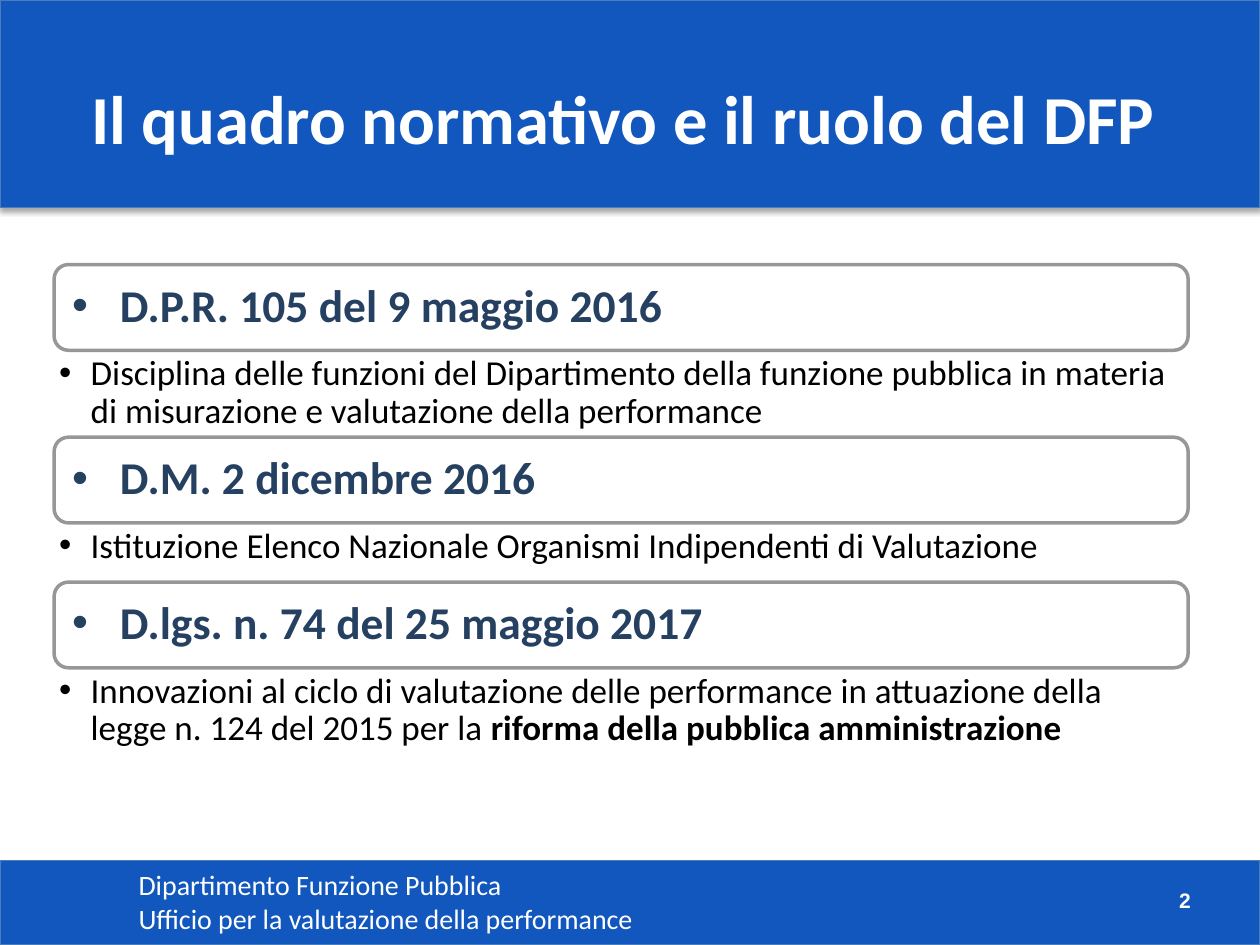
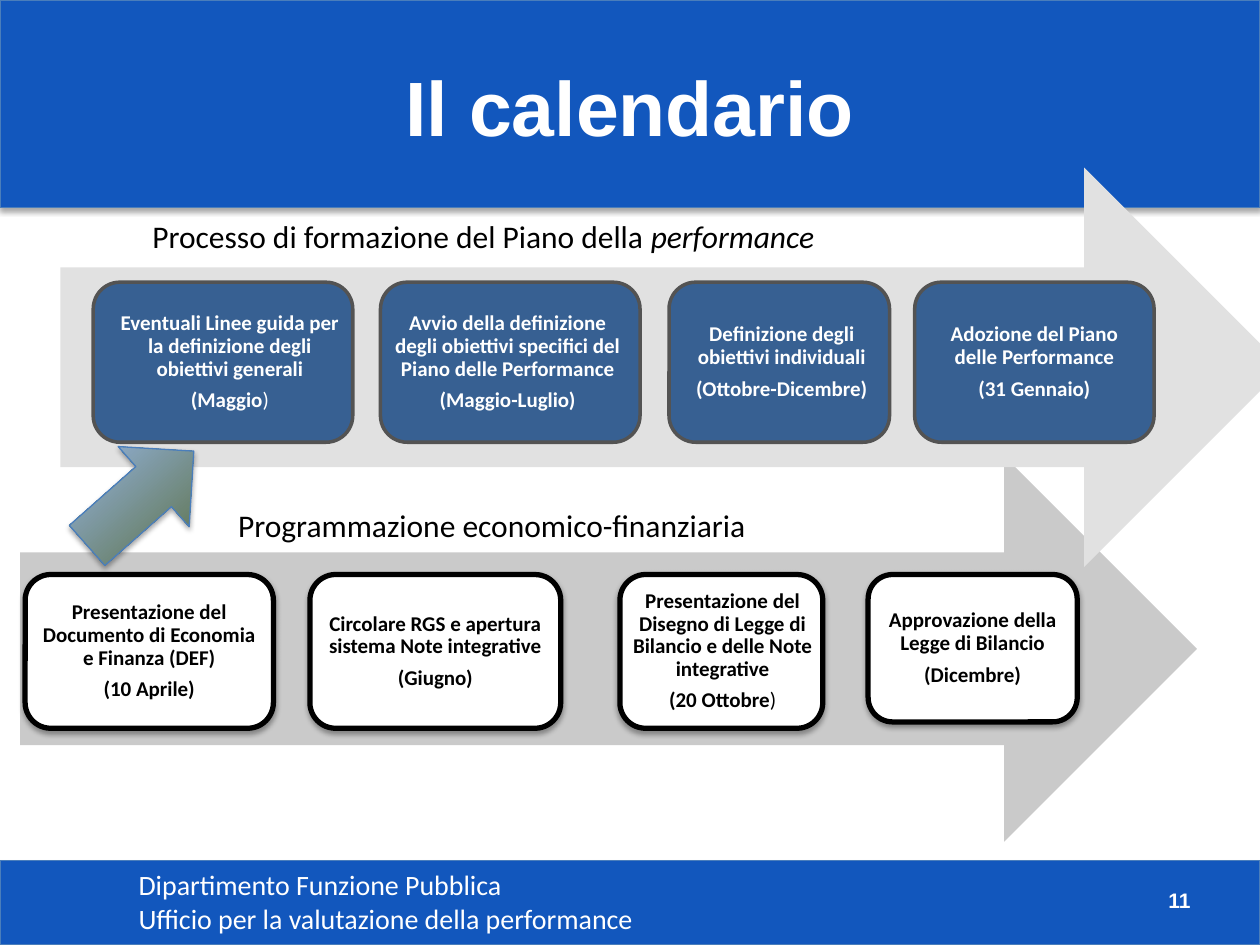
from lxml.etree import SubElement
from pptx import Presentation
from pptx.dml.color import RGBColor
from pptx.enum.shapes import MSO_SHAPE
from pptx.enum.text import MSO_ANCHOR, PP_ALIGN
from pptx.oxml.ns import qn
from pptx.util import Inches, Pt

BLUE = RGBColor(0x12, 0x57, 0xBD)
EDGE_BLUE = RGBColor(0x4A, 0x7E, 0xBB)
STEP_BLUE = RGBColor(0x37, 0x60, 0x92)
NAVY = RGBColor(0x25, 0x40, 0x61)
SKY = RGBColor(0xA2, 0xC3, 0xFF)
OLIVE = RGBColor(0x4F, 0x62, 0x28)
WHITE = RGBColor(0xFF, 0xFF, 0xFF)
BLACK = RGBColor(0x00, 0x00, 0x00)
DARK_GREY = RGBColor(0x53, 0x53, 0x53)
FRAME_GREY = RGBColor(0x97, 0x97, 0x97)
MID_GREY = RGBColor(0xCA, 0xCA, 0xCA)
LIGHT_GREY = RGBColor(0xE1, 0xE1, 0xE1)

COLUMNS, ROWS = 100, 75
INSET = 0.05


def write(paragraph, text, font="Calibri", size=12, color=BLACK, bold=False, italic=False):
    run = paragraph.add_run()
    run.text = text
    run.font.name = font
    run.font.size = Pt(size)
    run.font.color.rgb = color
    run.font.bold = bold
    run.font.italic = italic


def add_bullet(paragraph, indent):
    properties = paragraph._p.get_or_add_pPr()
    properties.set("marL", str(Inches(indent)))
    properties.set("indent", str(-Inches(indent)))
    SubElement(properties, qn("a:buFont"), typeface="Arial")
    SubElement(properties, qn("a:buChar"), char="•")


def add_shadow(shape):
    effects = SubElement(shape._element.spPr, qn("a:effectLst"))
    shadow = SubElement(effects, qn("a:outerShdw"), blurRad=str(Pt(3)),
                        dist=str(Pt(1.8)), dir="5400000", rotWithShape="0")
    tint = SubElement(shadow, qn("a:srgbClr"), val="000000")
    SubElement(tint, qn("a:alpha"), val="35000")


class Deck:
    def __init__(self):
        self.presentation = Presentation()
        self.presentation.slide_width = Inches(10)
        self.presentation.slide_height = Inches(7.5)
        self.column = self.presentation.slide_width / COLUMNS
        self.row = self.presentation.slide_height / ROWS
        self.slide = None

    def place(self, left, top, width, height):
        return (round(left * self.column), round(top * self.row),
                round(width * self.column), round(height * self.row))

    def fill_text(self, frame, paragraphs, align=PP_ALIGN.LEFT, anchor=MSO_ANCHOR.TOP,
                  insets=(INSET, INSET), vertical_inset=INSET, spacing=1.0, gap=0,
                  bullet_indent=None, **style):
        frame.word_wrap = True
        frame.vertical_anchor = anchor
        frame.margin_left, frame.margin_right = map(Inches, insets)
        frame.margin_top = frame.margin_bottom = Inches(vertical_inset)
        for index, runs in enumerate(paragraphs):
            paragraph = frame.add_paragraph() if index else frame.paragraphs[0]
            if bullet_indent:
                add_bullet(paragraph, bullet_indent)
            paragraph.alignment = align
            paragraph.line_spacing = spacing
            paragraph.space_before = Pt(gap if index else 0)
            for text, changes in [(runs, {})] if isinstance(runs, str) else runs:
                write(paragraph, text, **{**style, **changes})

    def text(self, box, *paragraphs, **style):
        frame = self.slide.shapes.add_textbox(*self.place(*box)).text_frame
        self.fill_text(frame, paragraphs, **style)

    def shape(self, kind, box, fill, line=None, weight=0.75, shadow=False):
        shape = self.slide.shapes.add_shape(kind, *self.place(*box))
        shape.fill.solid()
        shape.fill.fore_color.rgb = fill
        if line is None:
            shape.line.fill.background()
        else:
            shape.line.color.rgb = line
            shape.line.width = Pt(weight)
        if shadow:
            add_shadow(shape)
        else:
            shape.shadow.inherit = False
        return shape

    def start_slide(self, title, title_box, number, **title_style):
        self.slide = self.presentation.slides.add_slide(self.presentation.slide_layouts[6])
        for top, height in ((68.3, 6.7), (0, 16.5)):
            self.shape(MSO_SHAPE.RECTANGLE, (0, top, COLUMNS, height), BLUE, EDGE_BLUE,
                       shadow=True)
        self.text((10.5, 68.4, 42.4, 6.6), "Dipartimento Funzione Pubblica",
                  "Ufficio per la valutazione della performance", size=16, color=WHITE)
        self.text((90, 70, 5, 2.9), number, align=PP_ALIGN.RIGHT,
                  anchor=MSO_ANCHOR.MIDDLE, font="Arial", color=WHITE, bold=True)
        self.text(title_box, title, align=PP_ALIGN.CENTER, anchor=MSO_ANCHOR.MIDDLE,
                  color=WHITE, bold=True, **title_style)

    def law(self, top, heading, summary, summary_height):
        heading_height = 6.8
        frame = self.shape(MSO_SHAPE.ROUNDED_RECTANGLE, (4.3, top, 90, heading_height),
                           WHITE, FRAME_GREY, 2).text_frame
        self.fill_text(frame, [heading], anchor=MSO_ANCHOR.MIDDLE, insets=(0.11, 0.11),
                       spacing=0.9, bullet_indent=0.38, size=26, color=NAVY, bold=True)
        self.text((4.3, top + heading_height, 90, summary_height), summary,
                  insets=(0.04, 0.04), vertical_inset=0.04, spacing=0.9,
                  bullet_indent=0.25, size=20)
        return top + heading_height + summary_height

    def step(self, box, activity, period, insets, color, **look):
        frame = self.shape(MSO_SHAPE.ROUNDED_RECTANGLE, box, **look).text_frame
        self.fill_text(frame, [activity, period], align=PP_ALIGN.CENTER,
                       anchor=MSO_ANCHOR.MIDDLE, insets=insets, spacing=0.9, gap=5,
                       color=color, bold=True)

    def process(self, arrow_box, arrow_fill, top, steps, **look):
        self.shape(MSO_SHAPE.RIGHT_ARROW, arrow_box, arrow_fill)
        for left, width, height, activity, period, insets in steps:
            self.step((left, top, width, height), activity, period, insets, **look)

    def link_arrow(self, box, rotation):
        arrow = self.shape(MSO_SHAPE.RIGHT_ARROW, box, SKY, EDGE_BLUE)
        arrow.fill.gradient()
        arrow.fill.gradient_angle = 90
        for stop, color in zip(arrow.fill.gradient_stops, (OLIVE, SKY)):
            stop.color.rgb = color
        for position, stop in enumerate(arrow.fill.gradient_stops):
            stop.position = position
        arrow.rotation = rotation
        arrow._element.spPr.remove(arrow._element.spPr.find(qn("a:effectLst")))
        add_shadow(arrow)


def build_framework(deck):
    deck.start_slide("Il quadro normativo e il ruolo del DFP", (1, 3, 97, 12.5), "2",
                     size=39.2)
    laws = (
        ("D.P.R. 105 del 9 maggio 2016",
         "Disciplina delle funzioni del Dipartimento della funzione pubblica in materia "
         "di misurazione e valutazione della performance", 6.9),
        ("D.M. 2 dicembre 2016",
         "Istituzione Elenco Nazionale Organismi Indipendenti di Valutazione", 4.7),
        ("D.lgs. n. 74 del 25 maggio 2017",
         [("Innovazioni al ciclo di valutazione delle performance in attuazione della "
           "legge n. 124 del 2015 per la ", {}),
          ("riforma della pubblica amministrazione", {"bold": True})], 9.7),
    )
    top = 21
    for heading, summary, summary_height in laws:
        top = deck.law(top, heading, summary, summary_height)


def build_calendar(deck):
    deck.start_slide("Il calendario", (0, 2.1, COLUMNS, 12.5), "11", font="Arial", size=44)
    even = (INSET, INSET)
    closing = (")", {"bold": False})
    budget_steps = (
        (2, 19.7, 12.2, "Presentazione del Documento di Economia e Finanza (DEF)",
         "(10 Aprile)", even),
        (24.6, 19.9, 12.2, "Circolare RGS e apertura sistema Note integrative",
         "(Giugno)", even),
        (49.2, 16.1, 12.2,
         "Presentazione del Disegno di Legge di Bilancio e delle Note integrative",
         [("(20 Ottobre", {}), closing], (0.02, 0)),
        (68.9, 16.6, 11.7, "Approvazione della Legge di Bilancio", "(Dicembre)", even),
    )
    plan_steps = (
        (7.4, 20.6, 12.7, "Eventuali Linee guida per la definizione degli obiettivi generali",
         [("(Maggio", {}), closing], (0.11, 0)),
        (30.2, 20.6, 12.7,
         "Avvio della definizione degli obiettivi specifici del Piano delle Performance",
         "(Maggio-Luglio)", (0.03, 0.07)),
        (53.1, 17.5, 12.7, "Definizione degli obiettivi individuali",
         "(Ottobre-Dicembre)", (0.07, 0.03)),
        (72.6, 19, 12.7, "Adozione del Piano delle Performance", "(31 Gennaio)", even),
    )
    deck.process((1.6, 36.2, 93.4, 30.6), MID_GREY, 45.6, budget_steps,
                 color=BLACK, fill=WHITE, line=BLACK, weight=3, shadow=True)
    deck.text((18.4, 39.7, 45.3, 3.9), "Programmazione economico-finanziaria", size=18)
    deck.text((11.6, 16.7, 59.4, 3.9),
              [("Processo di formazione del Piano della ", {}),
               ("performance", {"italic": True})], size=18)
    deck.process((4.8, 13.3, 97.1, 31.7), LIGHT_GREY, 22.4, plan_steps,
                 color=WHITE, fill=STEP_BLUE, line=DARK_GREY, weight=2)
    deck.link_arrow((5.5, 35.3, 11.3, 8.5), 318.5)


def main():
    deck = Deck()
    build_framework(deck)
    build_calendar(deck)
    deck.presentation.save("out.pptx")


if __name__ == "__main__":
    main()
